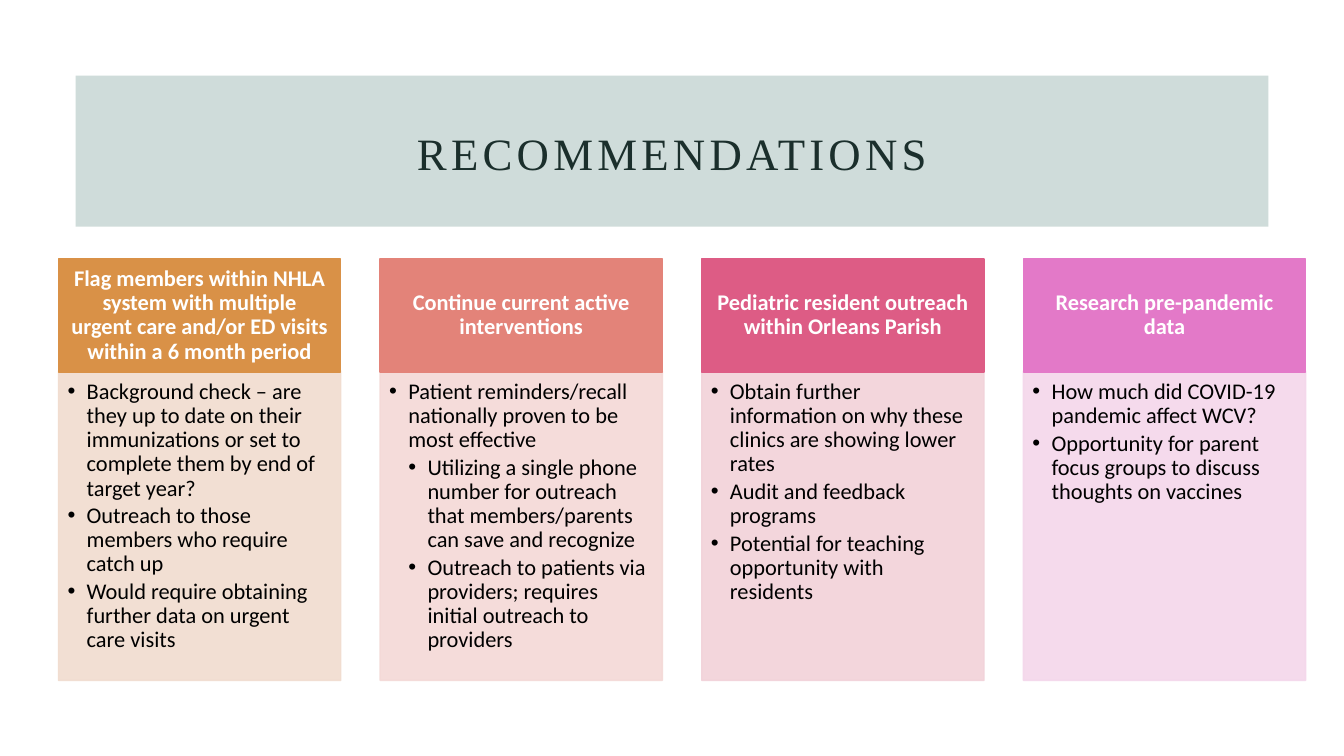
"""Build a recommendations slide with four headed columns of bullet points."""
import pptx
import pptx.dml.color
import pptx.enum.shapes
import pptx.enum.text
import pptx.oxml
import pptx.oxml.ns
import pptx.util

INCH = pptx.util.Inches
ALIGN = pptx.enum.text.PP_ALIGN
ANCHOR = pptx.enum.text.MSO_ANCHOR

COLORS = {
    "banner": "43746D", "title": "1B2F2C", "white": "FFFFFF", "black": "000000",
    "orange": "D99147", "orange_tint": "F1DCCF",
    "coral": "E38379", "coral_tint": "F4D9D7",
    "rose": "DD5C85", "rose_tint": "F2D2D9",
    "orchid": "E379C8", "orchid_tint": "F4D7EB",
}

FORMATS = {
    "title": {
        "font": {"name": "Times New Roman", "size": pptx.util.Pt(32), "bold": False},
        "color": "title",
        "frame": {"vertical_anchor": ANCHOR.MIDDLE},
        "paragraph": {"alignment": ALIGN.CENTER, "line_spacing": 0.9},
    },
    "heading": {
        "font": {"name": "Calibri", "size": pptx.util.Pt(16), "bold": True},
        "color": "white",
        "frame": {"vertical_anchor": ANCHOR.MIDDLE,
                  "margin_left": INCH(0.12), "margin_right": INCH(0.12),
                  "margin_top": INCH(0.07), "margin_bottom": INCH(0.07)},
        "paragraph": {"alignment": ALIGN.CENTER, "line_spacing": 0.9},
    },
    "list": {
        "font": {"name": "Calibri", "size": pptx.util.Pt(16), "bold": False},
        "color": "black",
        "frame": {"vertical_anchor": ANCHOR.TOP,
                  "margin_left": INCH(0.09), "margin_right": INCH(0.12),
                  "margin_top": INCH(0.09), "margin_bottom": INCH(0.14)},
        "paragraph": {"alignment": ALIGN.LEFT, "line_spacing": 0.9,
                      "space_before": pptx.util.Pt(0),
                      "space_after": pptx.util.Pt(2.4)},
    },
}

RECOMMENDATIONS = [
    ("orange",
     "Flag members within NHLA system with multiple urgent care and/or ED visits "
     "within a 6 month period",
     [(0, "Background check – are they up to date on their immunizations or set to "
          "complete them by end of target year?"),
      (0, "Outreach to those members who require catch up"),
      (0, "Would require obtaining further data on urgent care visits")]),
    ("coral",
     "Continue current active interventions",
     [(0, "Patient reminders/recall nationally proven to be most effective"),
      (1, "Utilizing a single phone number for outreach that members/parents can "
          "save and recognize"),
      (1, "Outreach to patients via providers; requires initial outreach to "
          "providers")]),
    ("rose",
     "Pediatric resident outreach within Orleans Parish",
     [(0, "Obtain further information on why these clinics are showing lower rates"),
      (0, "Audit and feedback programs"),
      (0, "Potential for teaching opportunity with residents")]),
    ("orchid",
     "Research pre-pandemic data",
     [(0, "How much did COVID-19 pandemic affect WCV?"),
      (0, "Opportunity for parent focus groups to discuss thoughts on vaccines")]),
]


def set_attributes(target, values):
    for name, value in values.items():
        setattr(target, name, value)


class RecommendationSlide:
    GRID_LEFT = 0.58
    COLUMN_PITCH = 3.19
    COLUMN_WIDTH = 2.8
    ROWS = {"heading": (2.57, 1.12), "list": (3.68, 3.07)}
    INDENT = 0.19

    def __init__(self, presentation):
        self.slide = presentation.slides.add_slide(presentation.slide_layouts[4])
        self.title_shape, *self.bodies = [
            shape for shape in self.slide.placeholders
            if shape.placeholder_format.idx < 10]

    def place(self, shape, left, top, width, height):
        box = {"left": left, "top": top, "width": width, "height": height}
        set_attributes(shape, {name: INCH(value) for name, value in box.items()})

    def cell(self, column, row):
        top, height = self.ROWS[row]
        left = self.GRID_LEFT + column * self.COLUMN_PITCH
        return left, top, self.COLUMN_WIDTH, height

    def paint(self, shape, color, opacity=100, outlined=True):
        rgb = pptx.dml.color.RGBColor.from_string(COLORS[color])
        shape.fill.solid()
        shape.fill.fore_color.rgb = rgb
        if outlined:
            shape.line.color.rgb = rgb
            shape.line.width = pptx.util.Pt(1)
        else:
            shape.line.fill.background()
        if opacity < 100:
            for element in shape._element.spPr.iter(pptx.oxml.ns.qn("a:srgbClr")):
                alpha = pptx.oxml.parse_xml(
                    f'<a:alpha {pptx.oxml.ns.nsdecls("a")} val="{opacity * 1000}"/>')
                element.append(alpha)

    def rectangle(self, box, color, **paint):
        shape = self.slide.shapes.add_shape(
            pptx.enum.shapes.MSO_SHAPE.RECTANGLE, *map(INCH, box))
        shape.shadow.inherit = False
        self.paint(shape, color, **paint)
        return shape

    def fill_text(self, shape, items, style):
        values = FORMATS[style]
        frame = shape.text_frame
        frame.word_wrap = True
        frame.auto_size = pptx.enum.text.MSO_AUTO_SIZE.NONE
        set_attributes(frame, values["frame"])
        for index, (level, text) in enumerate(items):
            paragraph = frame.add_paragraph() if index else frame.paragraphs[0]
            paragraph.level = level
            set_attributes(paragraph, values["paragraph"])
            run = paragraph.add_run()
            run.text = text
            set_attributes(run.font, values["font"])
            run.font.color.rgb = pptx.dml.color.RGBColor.from_string(
                COLORS[values["color"]])

    def title(self, text):
        banner = self.rectangle((0.75, 0.75, 11.83, 1.5), "banner",
                                opacity=25, outlined=False)
        self.slide.shapes._spTree.insert(2, banner._element)
        self.place(self.title_shape, 1.53, 1.04, 10.27, 1.02)
        self.fill_text(self.title_shape, [(0, text)], "title")
        run = self.title_shape.text_frame.paragraphs[0].runs[0]
        run._r.get_or_add_rPr().set("spc", "300")

    def heading(self, column, text, color):
        shape = self.rectangle(self.cell(column, "heading"), color)
        self.fill_text(shape, [(0, text)], "heading")

    def bullet_list(self, column, items, color):
        shape = self.bodies[column]
        self.place(shape, *self.cell(column, "list"))
        self.paint(shape, color, opacity=90)
        self.fill_text(shape, items, "list")
        for paragraph in shape.text_frame.paragraphs:
            properties = paragraph._p.get_or_add_pPr()
            properties.set("marL", str(INCH(self.INDENT * (paragraph.level + 1))))
            properties.set("indent", str(-INCH(self.INDENT)))
            for bullet in ('buFont typeface="Arial"', 'buChar char="•"'):
                tag, attribute = bullet.split(" ")
                properties.append(pptx.oxml.parse_xml(
                    f'<a:{tag} {pptx.oxml.ns.nsdecls("a")} {attribute}/>'))


def main():
    presentation = pptx.Presentation()
    presentation.slide_width = INCH(13.33)
    presentation.slide_height = INCH(7.5)
    page = RecommendationSlide(presentation)
    page.title("RECOMMENDATIONS")
    for column, (color, heading, items) in enumerate(RECOMMENDATIONS):
        page.heading(column, heading, color)
        page.bullet_list(column, items, f"{color}_tint")
    presentation.save("out.pptx")


if __name__ == "__main__":
    main()
